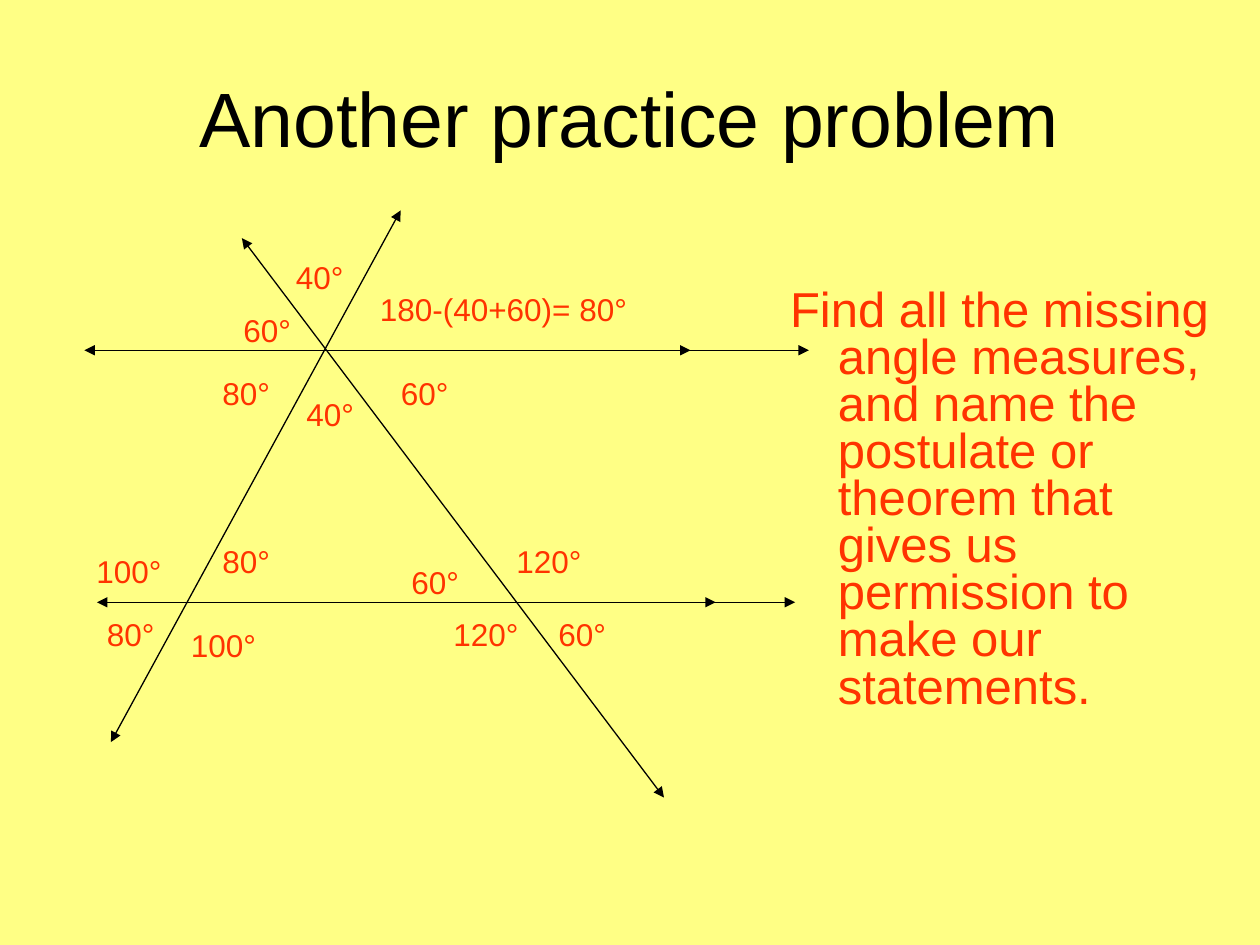
from lxml import etree
from pptx import Presentation
from pptx.dml.color import RGBColor
from pptx.enum.shapes import MSO_CONNECTOR
from pptx.enum.text import MSO_ANCHOR, MSO_AUTO_SIZE, PP_ALIGN
from pptx.oxml.ns import qn
from pptx.util import Inches, Pt

STRAIGHT = MSO_CONNECTOR.STRAIGHT
MIDDLE, TOP = MSO_ANCHOR.MIDDLE, MSO_ANCHOR.TOP
CENTER, LEFT = PP_ALIGN.CENTER, PP_ALIGN.LEFT
FIXED, GROW = MSO_AUTO_SIZE.NONE, MSO_AUTO_SIZE.SHAPE_TO_FIT_TEXT

PALE, BLACK, RED = "FFFF85", "000000", "FF3300"
UNIT = 1 / 12  # grid step of the angle labels, in inches
HIGH, LOW = 2.78, 4.78  # the two parallel lines

TITLE = "Another practice problem"
TASK = ("Find all the missing angle measures, and name the postulate or "
        "theorem that gives us permission to make our statements.")

# start, end, arrowhead at both ends
LINES = [
    ((0.67, HIGH), (6.42, HIGH), True),
    ((0.77, LOW), (6.31, LOW), True),
    ((1.92, 1.89), (5.27, 6.33), True),
    ((3.18, 1.67), (0.88, 5.89), True),
    ((5.06, HIGH), (5.48, HIGH), False),
    ((5.27, LOW), (5.68, LOW), False),
]

# text, column, row, width in grid steps
ANGLES = [
    ("40°", 27, 24, 8),
    ("180-(40+60)= 80°", 35, 27, 37),
    ("60°", 22, 29, 11),
    ("80°", 20, 35, 11),
    ("40°", 28, 37, 8),
    ("60°", 37, 35, 11),
    ("100°", 8, 52, 11),
    ("80°", 20, 51, 11),
    ("80°", 9, 58, 11),
    ("100°", 17, 59, 11),
    ("60°", 38, 53, 11),
    ("120°", 48, 51, 9),
    ("120°", 42, 58, 11),
    ("60°", 52, 58, 11),
]


def rgb(code):
    return RGBColor.from_string(code)


def assign(obj, values):
    for name, value in values.items():
        setattr(obj, name, value)


def place(shape, *box):
    assign(shape, dict(zip(("left", "top", "width", "height"), map(Inches, box))))


def write(shape, text, size, color, frame, para):
    """Fill a shape with one paragraph, formatted from the given dicts."""
    tf = shape.text_frame
    assign(tf, {"text": text, "word_wrap": True, **frame})
    p = tf.paragraphs[0]
    assign(p, para)
    font = p.runs[0].font
    assign(font, {"name": "Arial", "size": Pt(size)})
    font.color.rgb = rgb(color)
    return p


def draw(slide, start, end, both):
    line = slide.shapes.add_connector(STRAIGHT, *map(Inches, start + end))
    line.line.width = Pt(0.75)
    line.line.color.rgb = rgb(BLACK)
    ln = line.line._get_or_add_ln()
    for tag in ("a:headEnd", "a:tailEnd") if both else ("a:tailEnd",):
        etree.SubElement(ln, qn(tag), type="triangle")
    etree.SubElement(line._element.spPr, qn("a:effectLst"))


def main():
    prs = Presentation()
    assign(prs, {"slide_width": Inches(10), "slide_height": Inches(7.5)})
    slide = prs.slides.add_slide(prs.slide_layouts[1])
    fill = slide.background.fill
    fill.solid()
    fill.fore_color.rgb = rgb(PALE)

    title, body = slide.placeholders
    place(title, 0.5, 0.3, 9, 1.25)
    write(title, TITLE, 44, BLACK,
          {"vertical_anchor": MIDDLE, "auto_size": FIXED}, {"alignment": CENTER})

    place(body, 6.17, 2.25, 3.58, 3.75)
    p = write(body, TASK, 28, RED,
              {"vertical_anchor": TOP, "auto_size": FIXED},
              {"alignment": LEFT, "line_spacing": 0.8})
    props = p._p.get_or_add_pPr()
    props.set("marL", str(Inches(0.38)))
    props.set("indent", str(Inches(-0.38)))
    etree.SubElement(props, qn("a:buNone"))

    for start, end, both in LINES:
        draw(slide, start, end, both)

    for text, col, row, wide in ANGLES:
        box = slide.shapes.add_textbox(
            *map(Inches, (col * UNIT, row * UNIT, wide * UNIT, 0.4)))
        write(box, text, 18, RED, {"auto_size": GROW}, {"alignment": LEFT})

    prs.save("out.pptx")


if __name__ == "__main__":
    main()
